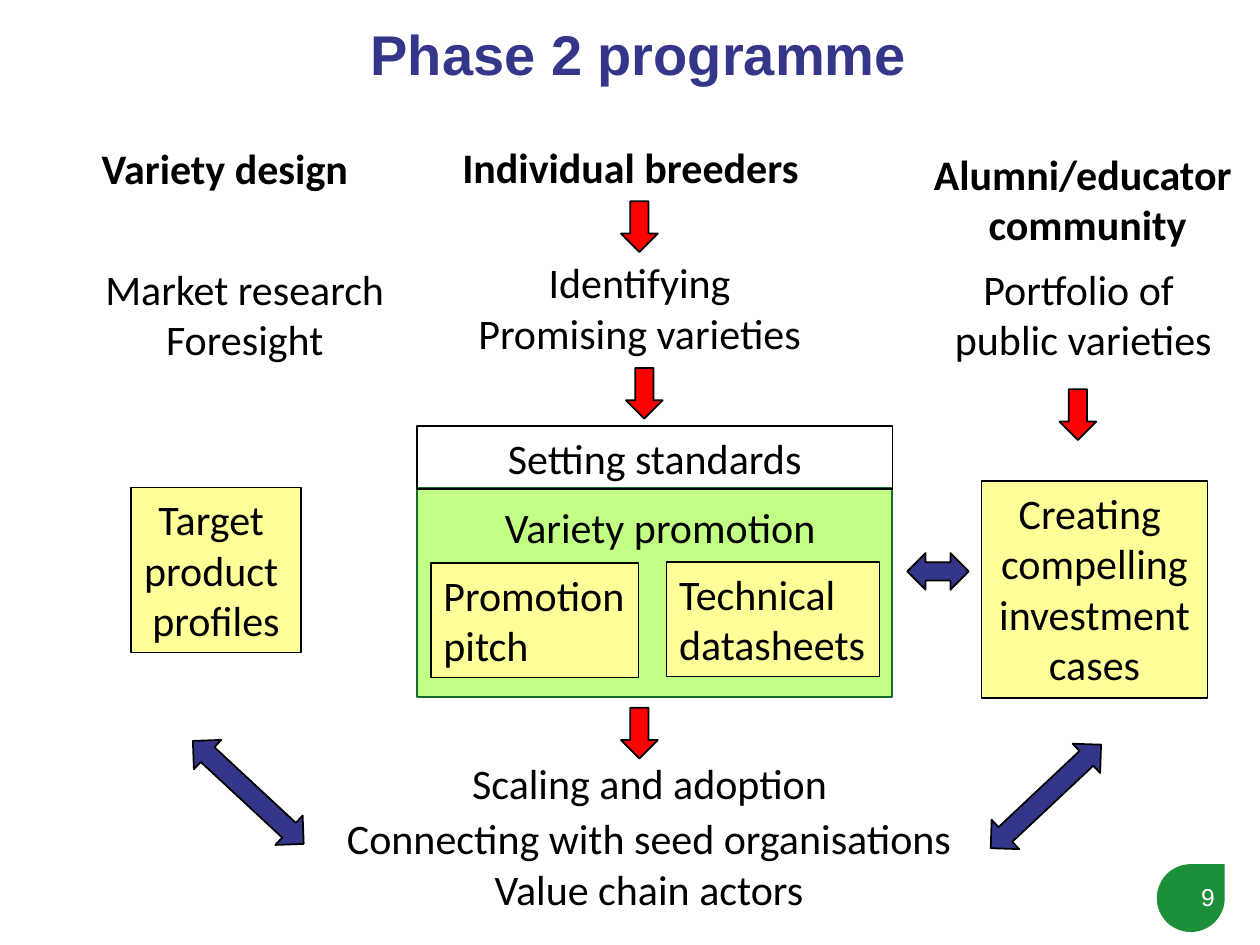
from pptx import Presentation
from pptx import util as u
from pptx.dml.color import RGBColor
from pptx.enum import shapes, text

KIND = shapes.MSO_SHAPE
LEFT, MID, RIGHT = text.PP_ALIGN.LEFT, text.PP_ALIGN.CENTER, text.PP_ALIGN.RIGHT
BLACK, WHITE, NAVY, RED = "000000", "FFFFFF", "343689", "FF0000"
LIME, CREAM, PINE, LEAF = "C2FF85", "FFFF99", "146B2A", "1B9039"

HEADS = [
    ("Variety design", (1.8, 2.74, 5.54, 1.27), LEFT),
    ("Alumni/educator\n community", (18.54, 2.87, 6.58, 2.31), MID),
    ("Individual breeders", (9.07, 2.72, 7.37, 1.27), LEFT),
]
NOTES = [
    ("Identifying\nPromising varieties", (9.35, 5.05, 7.09, 2.31), MID),
    ("Variety promotion", (9.93, 9.98, 6.83, 1.27), LEFT),
    ("Connecting with seed organisations\nValue chain actors", (6.05, 16.26, 14.07, 2.31), MID),
    ("Scaling and adoption", (9.22, 15.14, 7.75, 1.27), MID),
    ("Portfolio of \npublic varieties", (18.97, 5.18, 5.74, 2.31), MID),
    ("Market research\nForesight", (1.8, 5.18, 6.27, 2.31), MID),
]
CARDS = [
    ("Promotion|pitch", (8.69, 11.35, 4.19, 2.31), LEFT, CREAM),
    ("Technical \ndatasheets", (13.44, 11.33, 4.29, 2.31), LEFT, CREAM),
    ("Creating |compelling\ninvestment\ncases", (19.79, 9.7, 4.55, 4.37), MID, CREAM),
    ("Target \nproduct \nprofiles", (2.64, 9.83, 3.43, 3.33), MID, CREAM),
    ("Setting standards", (8.41, 8.59, 9.58, 1.27), MID, None),
]
DOWNS = [(12.52, 4.06), (12.62, 7.42), (12.52, 14.27), (21.36, 7.85)]
LINKS = [
    ((18.29, 11.15, 1.24, 0.74), 0),
    ((3.48, 15.57, 3.05, 0.81), 42.9),
    ((19.56, 15.65, 3.05, 0.81), -43.2),
]


def color(code):
    return RGBColor.from_string(code)


def place(box):
    return [u.Cm(n) for n in box]


def write(frame, words, align, size=24, bold=False, face="Calibri", ink=BLACK, wrap=False):
    frame.word_wrap = wrap
    for i, part in enumerate(words.split("|")):
        para = frame.paragraphs[0] if i == 0 else frame.add_paragraph()
        para.alignment = align
        for j, line in enumerate(part.split("\n")):
            if j:
                para.add_line_break()
            run = para.add_run()
            run.text = line
            font = run.font
            font.name, font.size, font.bold = face, u.Pt(size), bold
            font.color.rgb = color(ink)


def label(slide, words, box, align, **style):
    item = slide.shapes.add_textbox(*place(box))
    write(item.text_frame, words, align, **style)


def shape(slide, kind, box, fill, line=BLACK, width=1):
    item = slide.shapes.add_shape(kind, *place(box))
    item.shadow.inherit = False
    if fill:
        item.fill.solid()
        item.fill.fore_color.rgb = color(fill)
    else:
        item.fill.background()
    if line:
        item.line.color.rgb = color(line)
        item.line.width = u.Pt(width)
    else:
        item.line.fill.background()
    return item


def main():
    deck = Presentation()
    deck.slide_width, deck.slide_height = u.Cm(25.4), u.Cm(19.05)
    slide = deck.slides.add_slide(deck.slide_layouts[5])

    title = slide.shapes.title
    title.left, title.top, title.width, title.height = place((0.86, -0.08, 24.03, 2.49))
    title.text_frame.vertical_anchor = text.MSO_ANCHOR.MIDDLE
    write(title.text_frame, "Phase 2 programme", MID, 32, True, "Arial", NAVY, True)
    title.text_frame.paragraphs[0].line_spacing = 0.9

    shape(slide, KIND.TEAR, (23.32, 17.42, 1.37, 1.37), LEAF, None)
    label(slide, "9", (22.66, 17.65, 2.08, 0.86), RIGHT, size=14, face="Arial", ink=WHITE, wrap=True)

    shape(slide, KIND.RECTANGLE, (8.41, 9.83, 9.58, 4.22), LIME, PINE)
    for words, box, align in HEADS:
        label(slide, words, box, align, bold=True)
    for words, box, align in NOTES:
        label(slide, words, box, align)
    for words, box, align, fill in CARDS:
        card = shape(slide, KIND.RECTANGLE, box, fill, width=0.75)
        card.text_frame.vertical_anchor = text.MSO_ANCHOR.TOP
        write(card.text_frame, words, align)

    for left, top in DOWNS:
        shape(slide, KIND.DOWN_ARROW, (left, top, 0.74, 1.02), RED)
    for box, turn in LINKS:
        shape(slide, KIND.LEFT_RIGHT_ARROW, box, NAVY).rotation = turn

    deck.save("out.pptx")


if __name__ == "__main__":
    main()
